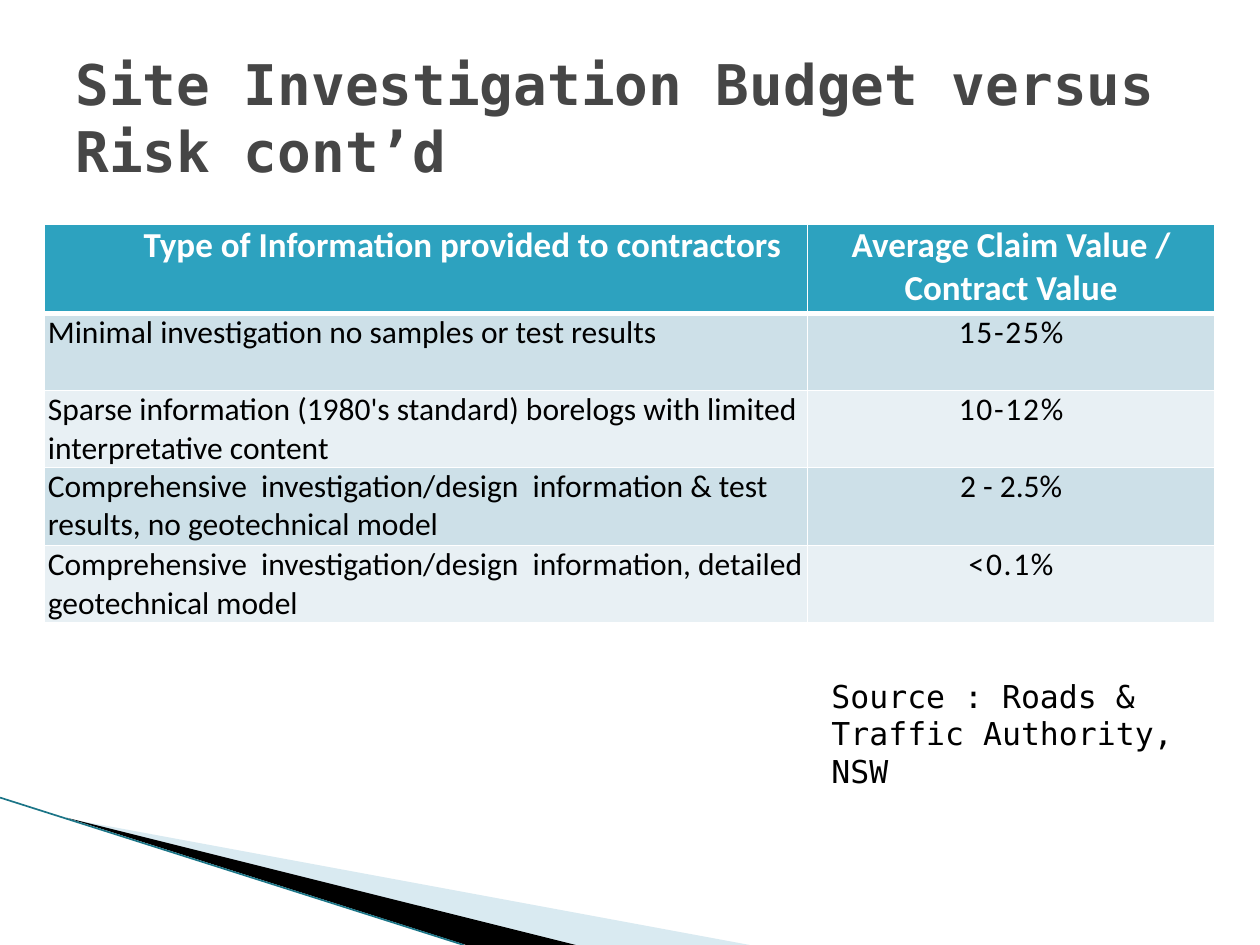
from dataclasses import dataclass

from lxml.etree import SubElement
from pptx import Presentation
from pptx.dml.color import RGBColor
from pptx.enum.shapes import MSO_CONNECTOR
from pptx.enum.text import MSO_ANCHOR, MSO_AUTO_SIZE, PP_ALIGN
from pptx.oxml import parse_xml
from pptx.oxml.ns import nsdecls, qn
from pptx.util import Inches, Pt

TITLE = "Site Investigation Budget versus Risk cont’d"
SOURCE = "Source : Roads & Traffic Authority, NSW"
HEAD = ("Type of Information provided to contractors",
        "Average Claim Value / Contract Value")
# Information type, claim share, letter spacing of the share in points
ROWS = [
    ("Minimal investigation no samples or test results", "15-25%", 1),
    ("Sparse information (1980's standard) borelogs with limited "
     "interpretative content", "10-12%", 1),
    ("Comprehensive  investigation/design  information & test results, "
     "no geotechnical model", "2 - 2.5%", 0),
    ("Comprehensive  investigation/design  information, detailed "
     "geotechnical model", "<0.1%", 1),
]
COLS = (6.06, 3.23)
HEIGHTS = (0.71, 0.61, 0.61, 0.62, 0.61)


@dataclass(frozen=True)
class Theme:
    mono: str = "DejaVu Sans Mono"
    sans: str = "Calibri"
    title: str = "464646"
    ink: str = "000000"
    white: str = "FFFFFF"
    head: str = "2DA2BF"
    bands: tuple = ("CDE0E8", "E8F0F4")
    pale: str = "A0CBDC"
    edge: str = "1B7587"
    big: int = 32
    mid: int = 20
    body: int = 18


THEME = Theme()

# Points, colour, opacity in percent
WEDGES = [
    ([(0.55, 6.5), (5.95, 7.5), (4.56, 7.5)], THEME.pale, 40),
    ([(0.53, 6.49), (4.57, 7.5), (3.7, 7.5)], THEME.ink, 100),
]


def rgb(code):
    return RGBColor.from_string(code)


def add_run(para, text, font, size, color, bold=False, gap=0):
    run = para.add_run()
    run.text = text
    run.font.name = font
    run.font.size = Pt(size)
    run.font.bold = bold
    run.font.color.rgb = rgb(color)
    if gap:
        run.font._element.set("spc", str(gap * 100))


def add_wedge(slide, points, color, alpha):
    pts = [(Inches(x), Inches(y)) for x, y in points]
    form = slide.shapes.build_freeform(*pts[0])
    form.add_line_segments(pts[1:], close=True)
    shape = form.convert_to_shape()
    shape.shadow.inherit = False
    shape.line.fill.background()
    shape.fill.solid()
    shape.fill.fore_color.rgb = rgb(color)
    if alpha < 100:
        clr = shape._element.spPr.find(".//" + qn("a:srgbClr"))
        SubElement(clr, qn("a:alpha"), val=str(alpha * 1000))


def add_edge(slide):
    line = slide.shapes.add_connector(
        MSO_CONNECTOR.STRAIGHT, 0, Inches(6.33), Inches(3.68), Inches(7.5))
    line.line.color.rgb = rgb(THEME.edge)
    line.line.width = Pt(0.95)
    SubElement(line._element.spPr, qn("a:effectLst"))


def add_text(slide, box, text, size, color, bold=False):
    shape = slide.shapes.add_textbox(*map(Inches, box))
    frame = shape.text_frame
    frame.word_wrap = True
    add_run(frame.paragraphs[0], text, THEME.mono, size, color, bold)
    return frame


def set_cell(cell, fill, base):
    """Set fill, margins and borders; base is the bottom border in points."""
    cell.fill.solid()
    cell.fill.fore_color.rgb = rgb(fill)
    cell.margin_left = cell.margin_right = Inches(0.03)
    cell.margin_top = cell.margin_bottom = 0
    props = cell._tc.get_or_add_tcPr()
    for i, (side, width) in enumerate(zip("LRTB", (1, 1, 1, base))):
        props.insert(i, parse_xml(
            f'<a:ln{side} {nsdecls("a")} w="{Pt(width)}"><a:solidFill>'
            f'<a:srgbClr val="{THEME.white}"/></a:solidFill></a:ln{side}>'))


def add_claims(slide):
    table = slide.shapes.add_table(
        len(HEIGHTS), len(COLS), Inches(0.35), Inches(1.78),
        Inches(sum(COLS)), Inches(sum(HEIGHTS))).table
    for col, width in zip(table.columns, COLS):
        col.width = Inches(width)
    for row, height in zip(table.rows, HEIGHTS):
        row.height = Inches(height)
    for r, (kind, share, gap) in enumerate([(*HEAD, 0), *ROWS]):
        top = r == 0
        fill = THEME.head if top else THEME.bands[(r - 1) % 2]
        size = THEME.mid if top else THEME.body
        color = THEME.white if top else THEME.ink
        for c, text in enumerate((kind, share)):
            cell = table.cell(r, c)
            set_cell(cell, fill, 3 if top else 1)
            para = cell.text_frame.paragraphs[0]
            if c:
                para.alignment = PP_ALIGN.CENTER
            elif top:
                para._p.get_or_add_pPr().set("marL", str(Inches(0.76)))
            add_run(para, text, THEME.sans, size, color, top, gap if c else 0)


def main():
    deck = Presentation()
    deck.slide_width, deck.slide_height = Inches(10), Inches(7.5)
    slide = deck.slides.add_slide(deck.slide_layouts[6])
    for wedge in WEDGES:
        add_wedge(slide, *wedge)
    add_edge(slide)
    add_claims(slide)
    title = add_text(slide, (0.5, 0.3, 9, 1.25), TITLE, THEME.big,
                     THEME.title, True)
    title.vertical_anchor = MSO_ANCHOR.MIDDLE
    note = add_text(slide, (6.5, 5.32, 3.15, 0.71), SOURCE, THEME.body,
                    THEME.ink)
    note.auto_size = MSO_AUTO_SIZE.SHAPE_TO_FIT_TEXT
    deck.save("out.pptx")


if __name__ == "__main__":
    main()
